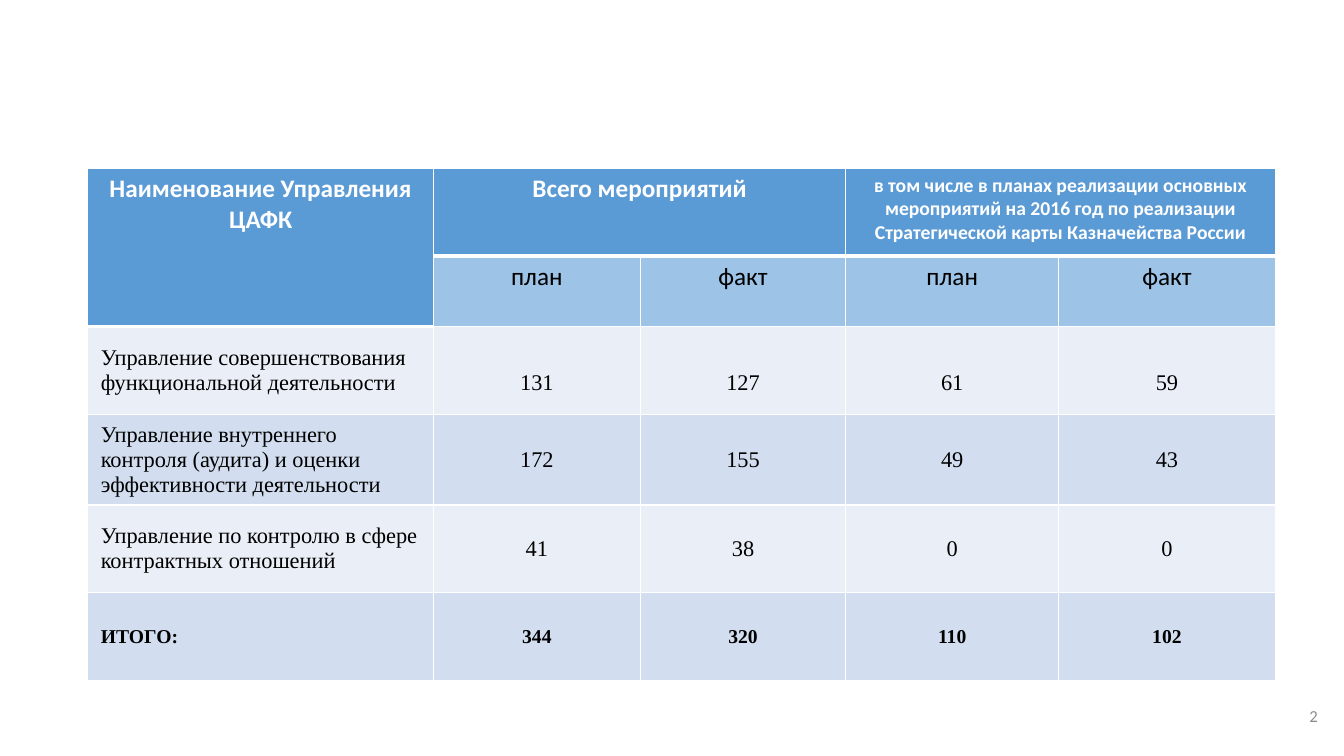
"""Build a slide with a table of planned and completed activities by department."""
from lxml.etree import SubElement
from pptx import Presentation
from pptx.dml.color import RGBColor
from pptx.enum.text import MSO_ANCHOR, PP_ALIGN
from pptx.oxml.ns import qn
from pptx.util import Inches, Pt


def style_text(text_frame, size, font, color, bold, alignment):
    for paragraph in text_frame.paragraphs:
        paragraph.alignment = alignment
        for run in paragraph.runs:
            run.font.size, run.font.name, run.font.bold = Pt(size), font, bold
            run.font.color.rgb = RGBColor.from_string(color)


def style_cell(cell, fill, bottom_width):
    properties = cell._tc.get_or_add_tcPr()
    for side, width in (("L", 1), ("R", 1), ("T", 1), ("B", bottom_width)):
        line = SubElement(properties, qn(f"a:ln{side}"), w=str(Pt(width)))
        SubElement(SubElement(line, qn("a:solidFill")), qn("a:srgbClr"), val="FFFFFF")
    cell.fill.solid()
    cell.fill.fore_color.rgb = RGBColor.from_string(fill)


COLUMN_WIDTHS = [3.43, 2.05, 2.04, 2.11, 2.15]
ROW_HEIGHTS = [0.87, 0.57, 0.87, 0.87, 0.87, 0.87]
ROWS = [
    ["Наименование Управления ЦАФК", "Всего мероприятий", "",
     "в том числе в планах реализации основных мероприятий на 2016 год "
     "по реализации Стратегической карты Казначейства России", ""],
    ["", "план", "факт", "план", "факт"],
    ["Управление совершенствования\nфункциональной деятельности", "131", "127", "61", "59"],
    ["Управление внутреннего контроля (аудита) и оценки эффективности деятельности",
     "172", "155", "49", "43"],
    ["Управление по контролю в сфере контрактных отношений", "41", "38", "0", "0"],
    ["ИТОГО:", "344", "320", "110", "102"],
]
TOTAL_ROW = len(ROWS) - 1

presentation = Presentation()
presentation.slide_width, presentation.slide_height = Inches(13.33), Inches(7.5)
slide = presentation.slides.add_slide(presentation.slide_layouts[6])

number_box = slide.shapes.add_textbox(Inches(12.66), Inches(6.95), Inches(0.51), Inches(0.5))
number_box.text_frame.word_wrap = True
number_box.text_frame.text = "2"
style_text(number_box.text_frame, 12, "Calibri", "8C8C8C", False, PP_ALIGN.RIGHT)

table = slide.shapes.add_table(
    len(ROWS), len(COLUMN_WIDTHS), Inches(0.87), Inches(1.67),
    Inches(sum(COLUMN_WIDTHS)), Inches(sum(ROW_HEIGHTS))).table
table.first_row = table.horz_banding = False
for column, width in zip(table.columns, COLUMN_WIDTHS):
    column.width = Inches(width)
for row, height in zip(table.rows, ROW_HEIGHTS):
    row.height = Inches(height)

for row_index, texts in enumerate(ROWS):
    for column_index, text in enumerate(texts):
        cell = table.cell(row_index, column_index)
        is_header = row_index == 0 or (row_index == 1 and column_index == 0)
        if is_header:
            size = 14 if column_index == 3 else 18
            fill, font, color, bold = "5B9BD5", "Calibri", "FFFFFF", True
        elif row_index == 1:
            size, fill, font, color, bold = 18, "9DC3E6", "Calibri", "000000", False
        else:
            bold = row_index == TOTAL_ROW
            size = 14 if bold else 16
            fill = "D2DEEF" if row_index % 2 else "EAEFF7"
            font, color = "Times New Roman", "000000"
            cell.vertical_anchor = MSO_ANCHOR.MIDDLE
            cell.margin_left = cell.margin_right = Inches(0.13)
            if row_index == 2 and column_index > 0:
                cell.margin_top = Inches(0.3)
        style_cell(cell, fill, 3 if is_header else 1)
        if text:
            cell.text_frame.text = text
            is_name = row_index > 1 and column_index == 0
            alignment = PP_ALIGN.LEFT if is_name else PP_ALIGN.CENTER
            style_text(cell.text_frame, size, font, color, bold, alignment)

table.cell(0, 0).merge(table.cell(1, 0))
for first_column in (1, 3):
    table.cell(0, first_column).merge(table.cell(0, first_column + 1))

presentation.save("out.pptx")
